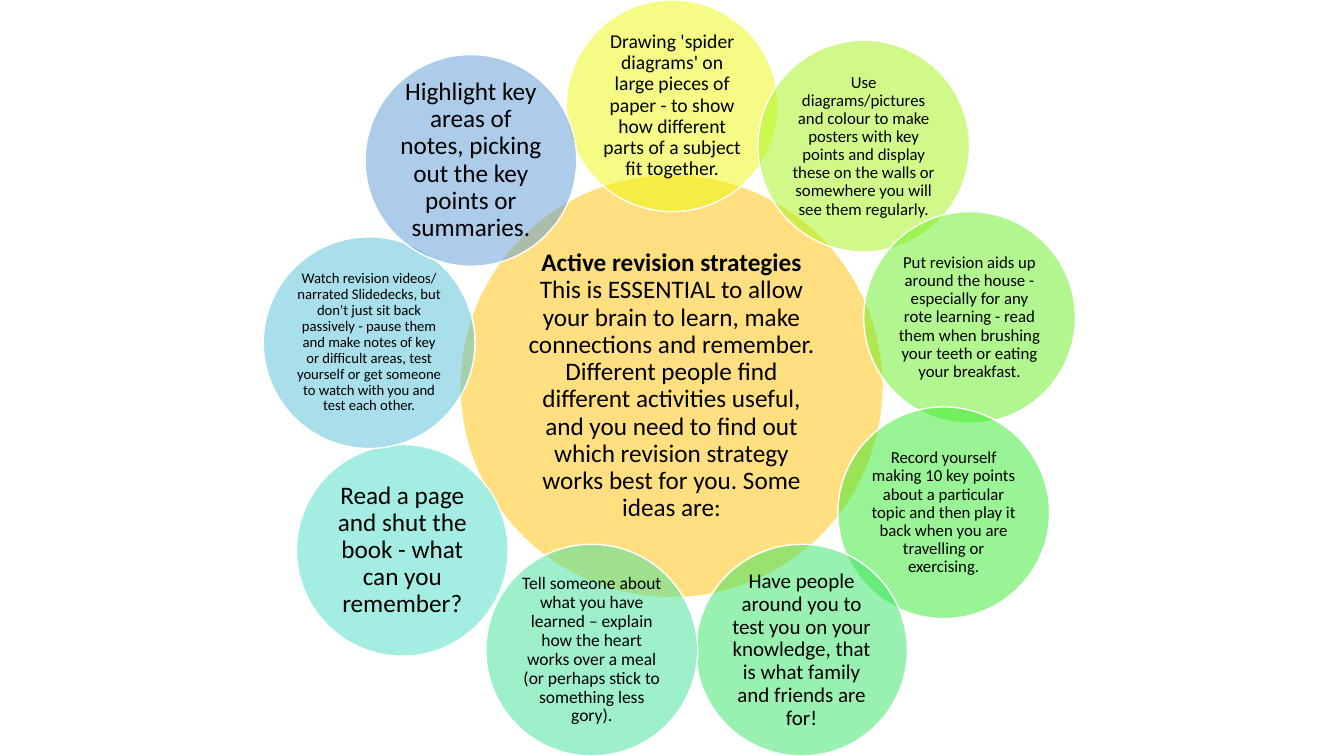
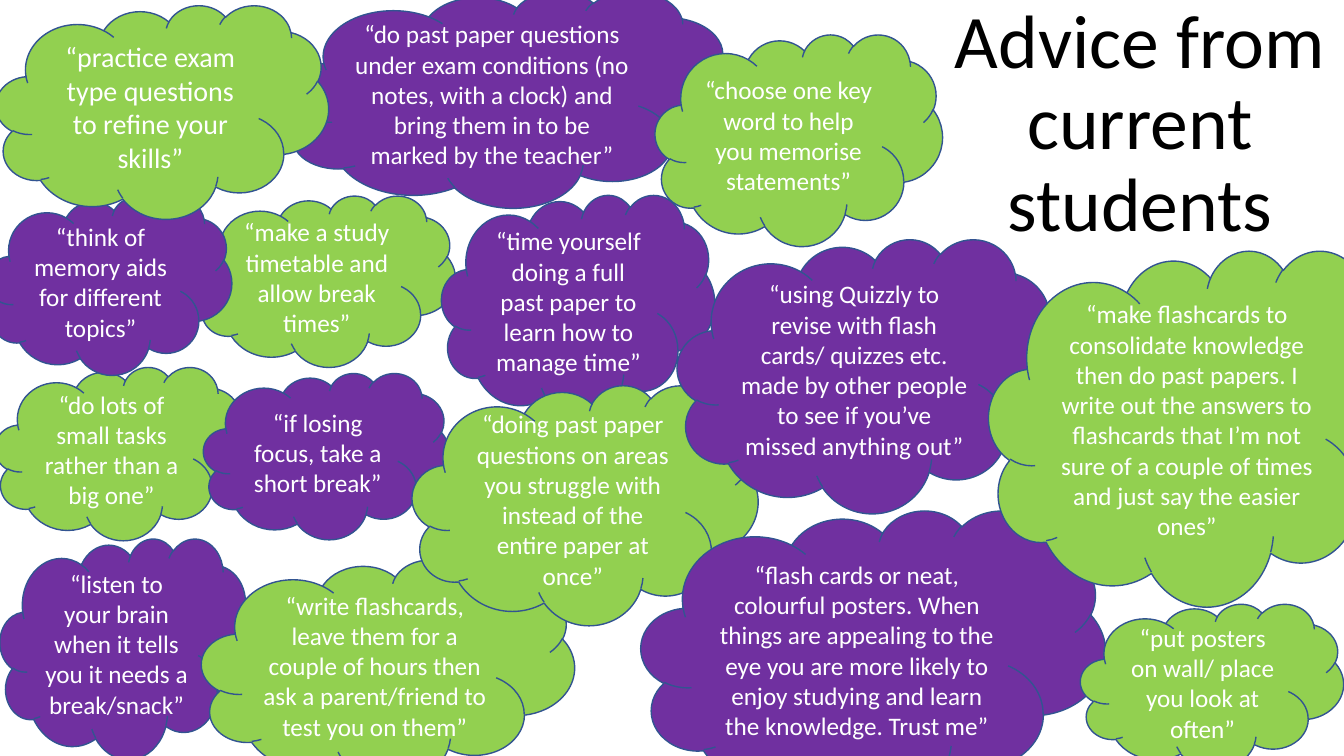
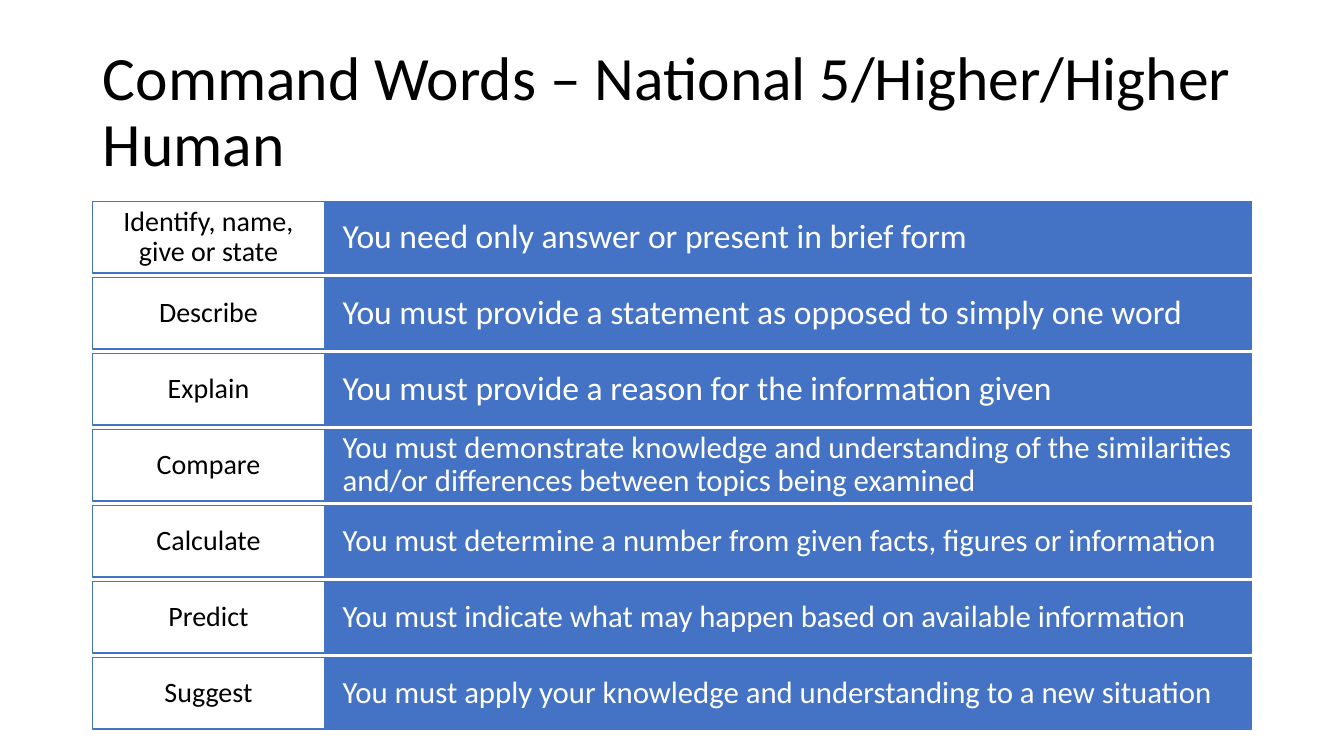
from pptx import Presentation
from pptx.dml.color import RGBColor
from pptx.enum.shapes import MSO_SHAPE
from pptx.enum.text import MSO_ANCHOR, MSO_AUTO_SIZE, PP_ALIGN
from pptx.oxml.ns import qn
from pptx.util import Pt
from lxml.etree import SubElement

FONT = "Calibri"
COLOURS = {
    "black": "000000",
    "white": "FFFFFF",
    "amber": "FFC000",
    "purple": "7030A0",
    "green": "92D050",
    "cloud edge": "325491",
    "blue": "4472C4",
}


def write(shape, text, size, colour="black", align=PP_ALIGN.CENTER,
          spacing=0.9, insets=(7.2, 3.6), heading=None):
    """Fill the shape with one paragraph; heading is a bold first line."""
    frame = shape.text_frame
    frame.word_wrap = True
    frame.auto_size = MSO_AUTO_SIZE.NONE
    frame.vertical_anchor = MSO_ANCHOR.MIDDLE
    frame.margin_left = frame.margin_right = Pt(insets[0])
    frame.margin_top = frame.margin_bottom = Pt(insets[1])
    paragraph = frame.paragraphs[0]
    paragraph.alignment = align
    paragraph.line_spacing = spacing
    for words, bold in ((heading, True), (text, False)):
        if words is None:
            continue
        run = paragraph.add_run()
        run.text = words
        run.font.name = FONT
        run.font.size = Pt(size)
        run.font.bold = bold
        run.font.color.rgb = RGBColor.from_string(COLOURS[colour])
        if bold:
            paragraph.add_line_break()


def add_block(slide, preset, box, fill, line, opacity=100):
    """Add a preset shape; box is left, top, width, height in points."""
    block = slide.shapes.add_shape(preset, *map(Pt, box))
    block.shadow.inherit = False
    block.fill.solid()
    block.fill.fore_color.rgb = RGBColor.from_string(fill)
    block.line.color.rgb = RGBColor.from_string(COLOURS[line])
    block.line.width = Pt(1)
    if opacity < 100:
        tint = block.fill._xPr.find(qn("a:solidFill"))[0]
        SubElement(tint, qn("a:alpha")).set("val", str(opacity * 1000))
    return block


deck = Presentation()
deck.slide_width, deck.slide_height = Pt(960), Pt(540)
title_only, blank = deck.slide_layouts[5], deck.slide_layouts[6]

# Revision strategies
strategies_slide = deck.slides.add_slide(blank)
hub = add_block(strategies_slide, MSO_SHAPE.OVAL, (328.5, 124.6, 302.4, 302.4),
                COLOURS["amber"], "white", opacity=50)
write(hub, "This is ESSENTIAL to allow your brain to learn, make connections and "
      "remember. Different people find different activities useful, and you need to "
      "find out which revision strategy works best for you. Some ideas are:",
      18, insets=(2.2, 2.2), heading="Active revision strategies")

BUBBLE = 151.2
strategies = [
    (404.6, 0, "ECF90B", 14, "Drawing 'spider diagrams' on large pieces of paper - to show "
     "how different parts of a subject fit together."),
    (541.4, 28.8, "A4F416", 12, "Use diagrams/pictures and colour to make posters with key "
     "points and display these on the walls or somewhere you will see them regularly."),
    (617, 151.2, "67EF21", 12, "Put revision aids up around the house - especially for any "
     "rote learning - read them when brushing your teeth or eating your breakfast."),
    (598.5, 290.7, "32EA2B", 12, "Record yourself making 10 key points about a particular "
     "topic and then play it back when you are travelling or exercising."),
    (497, 388.8, "35E564", 15, "Have people around you to test you on your knowledge, that "
     "is what family and friends are for!"),
    (347.1, 388.8, "3FE19B", 12.5, "Tell someone about what you have learned – explain how "
     "the heart works over a meal (or perhaps stick to something less gory)."),
    (211.8, 317.5, "49DDC9", 18, "Read a page and shut the book - what can you remember?"),
    (188.1, 169.2, "52C1D9", 10.5, "Watch revision videos/ narrated Slidedecks, but don't "
     "just sit back passively - pause them and make notes of key or difficult areas, test "
     "yourself or get someone to watch with you and test each other."),
    (260.8, 39, "5B9BD5", 18, "Highlight key areas of notes, picking out the key points or "
     "summaries."),
]
for left, top, tint, size, strategy in strategies:
    bubble = add_block(strategies_slide, MSO_SHAPE.OVAL, (left, top, BUBBLE, BUBBLE),
                       tint, "white", opacity=50)
    inset = size / 8
    write(bubble, strategy, size, insets=(inset, inset))

# Student advice and command words share the title style
titles = [
    ("Advice from current students", 54, PP_ALIGN.CENTER, (665.3, 15.1, 298, 149)),
    ("Command Words – National 5/Higher/Higher Human", 44, PP_ALIGN.LEFT,
     (66.2, 28.8, 828, 104.4)),
]
titled_slides = []
for heading, size, align, (left, top, width, height) in titles:
    slide = deck.slides.add_slide(title_only)
    title = slide.shapes.title
    title.left, title.top = Pt(left), Pt(top)
    title.width, title.height = Pt(width), Pt(height)
    write(title, heading, size, align=align)
    titled_slides.append(slide)
advice_slide, commands_slide = titled_slides

# Student advice, from back to front
quotes = [
    ((0, 384.5, 179.3, 157.7), "purple", 18,
     "“listen to your brain when it tells you it needs a break/snack”"),
    ((140.4, 139.7, 185, 122.4), "green", 18,
     "“make a study timetable and allow break times”"),
    ((-3.6, 262.1, 179.3, 123.8), "green", 18,
     "“do lots of small tasks rather than a big one”"),
    ((315.4, 139, 195.1, 159.8), "purple", 18,
     "“time yourself doing a full past paper to learn how to manage time”"),
    ((144, 399.6, 266.4, 159.1), "green", 18,
     "“write flashcards, leave them for a couple of hours then ask a parent/friend to test "
     "you on them”"),
    ((145.4, 266.4, 175.7, 118.8), "purple", 18,
     "“if losing focus, take a short break”"),
    ((294.5, 275, 247, 171.4), "green", 18,
     "“doing past paper questions on areas you struggle with instead of the entire paper "
     "at once”"),
    ((-9.4, 140.4, 175, 127.4), "purple", 18,
     "“think of memory aids for different topics”"),
    ((483.8, 170.6, 272.2, 195.8), "purple", 18,
     "“using Quizzly to revise with flash cards/ quizzes etc. made by other people to see "
     "if you’ve missed anything out”"),
    ((202.3, -6.5, 321.1, 154.8), "purple", 18,
     "“do past paper questions under exam conditions (no notes, with a clock) and bring "
     "them in to be marked by the teacher”"),
    ((-2.9, 3.6, 237.6, 152.6), "green", 20,
     "“practice exam type questions to refine your skills”"),
    ((457.9, 364.3, 331.9, 209.5), "purple", 18,
     "“flash cards or neat, colourful posters. When things are appealing to the eye you "
     "are more likely to enjoy studying and learn the knowledge. Trust me”"),
    ((706.3, 178.6, 304.6, 254.2), "green", 18,
     "“make flashcards to consolidate knowledge then do past papers. I write out the "
     "answers to flashcards that I’m not sure of a couple of times and just say the "
     "easier ones”"),
    ((468, 24.5, 205.2, 151.2), "green", 18,
     "“choose one key word to help you memorise statements”"),
    ((771.8, 431.3, 187.9, 118.1), "green", 18,
     "“put posters on wall/ place you look at often”"),
]
for box, colour, size, quote in quotes:
    cloud = add_block(advice_slide, MSO_SHAPE.CLOUD, box, COLOURS[colour], "cloud edge")
    write(cloud, quote, size, "white", spacing=1.0)

# Command words
ROWS_LEFT, ROWS_TOP, ROW_HEIGHT, ROW_STEP = 66.2, 144, 51.1, 54.26
WORD_WIDTH, MEANING_WIDTH = 165.6, 662.4
commands = [
    ("Identify, name, give or state", 24, "You need only answer or present in brief form"),
    ("Describe", 24, "You must provide a statement as opposed to simply one word"),
    ("Explain", 24, "You must provide a reason for the information given"),
    ("Compare", 22, "You must demonstrate knowledge and understanding of the similarities "
     "and/or differences between topics being examined"),
    ("Calculate", 22, "You must determine a number from given facts, figures or information"),
    ("Predict", 22, "You must indicate what may happen based on available information"),
    ("Suggest", 22, "You must apply your knowledge and understanding to a new situation"),
]
for row, (word, size, meaning) in enumerate(commands):
    top = ROWS_TOP + row * ROW_STEP
    meaning_box = add_block(commands_slide, MSO_SHAPE.RECTANGLE,
                            (ROWS_LEFT + WORD_WIDTH, top, MEANING_WIDTH, ROW_HEIGHT),
                            COLOURS["blue"], "blue")
    write(meaning_box, meaning, size, "white", align=PP_ALIGN.LEFT, insets=(13, 0))
    word_box = add_block(commands_slide, MSO_SHAPE.RECTANGLE,
                         (ROWS_LEFT, top, WORD_WIDTH, ROW_HEIGHT),
                         COLOURS["white"], "blue")
    write(word_box, word, 20, insets=(8.8, 5))

deck.save("out.pptx")
